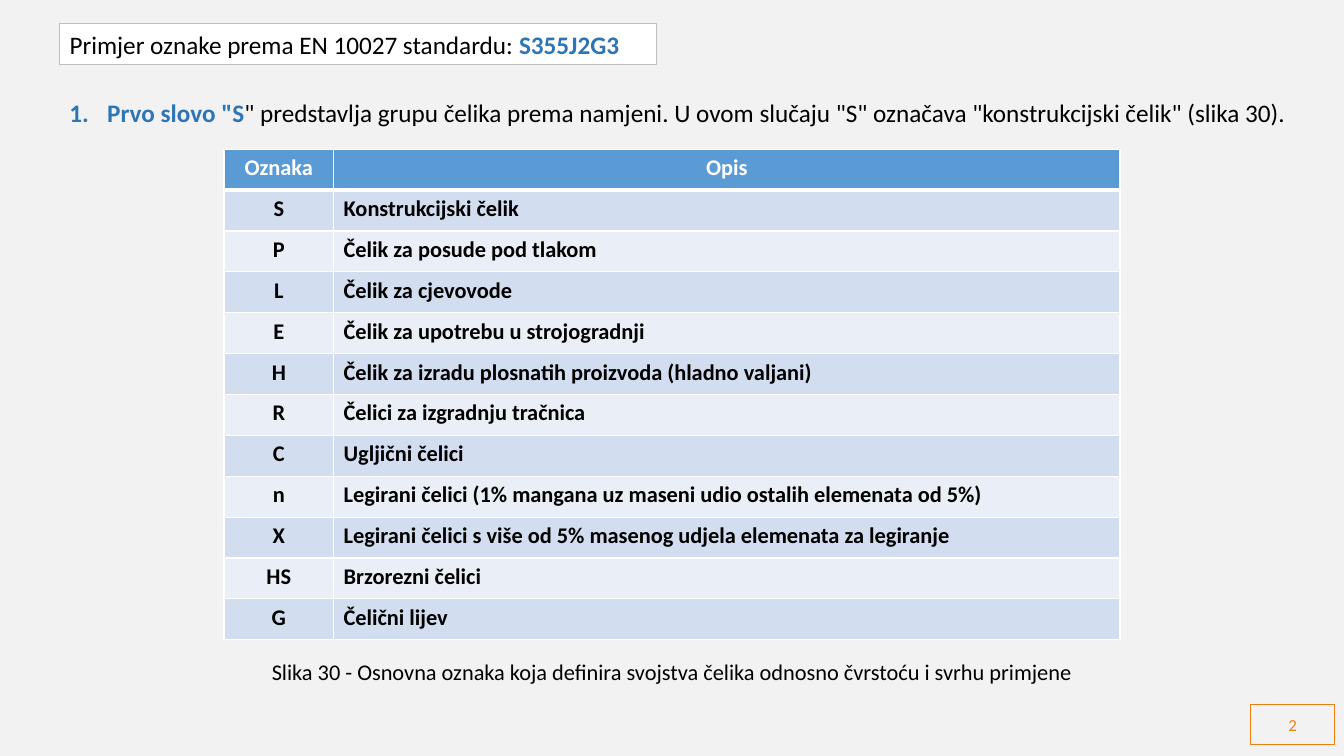
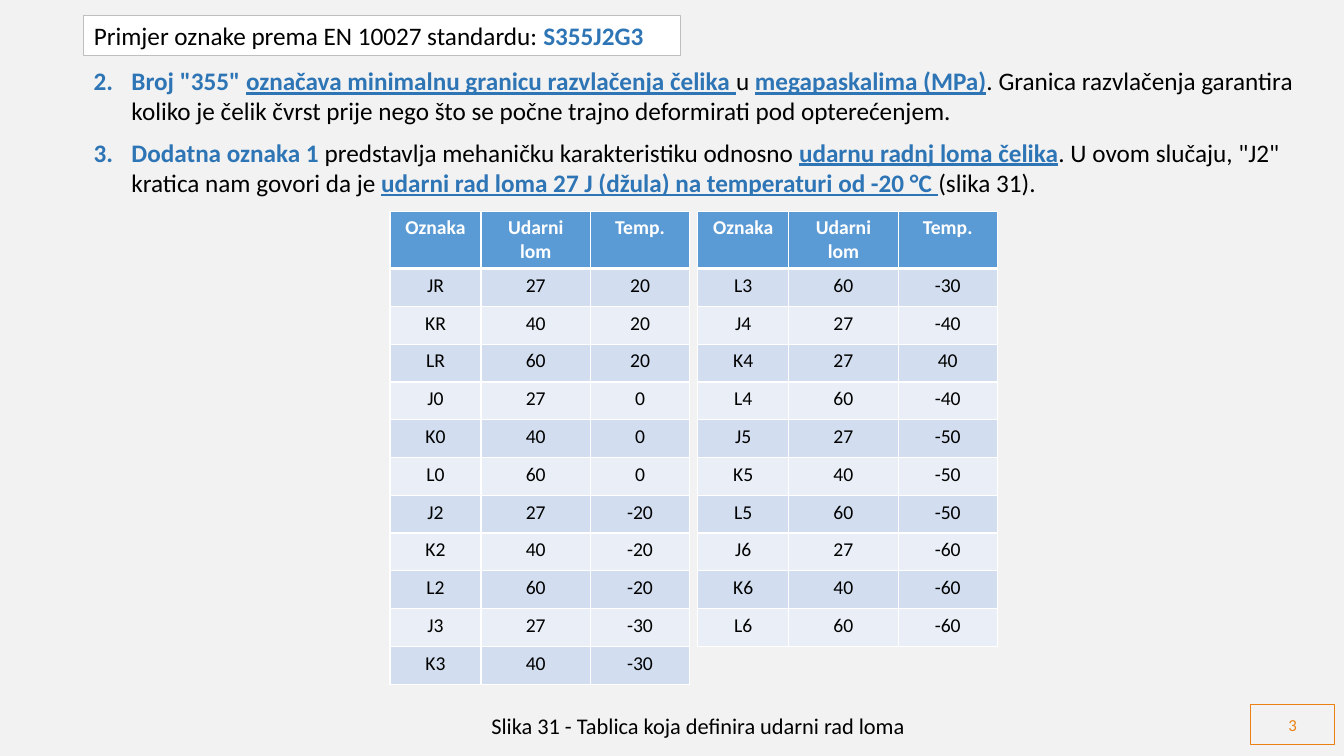
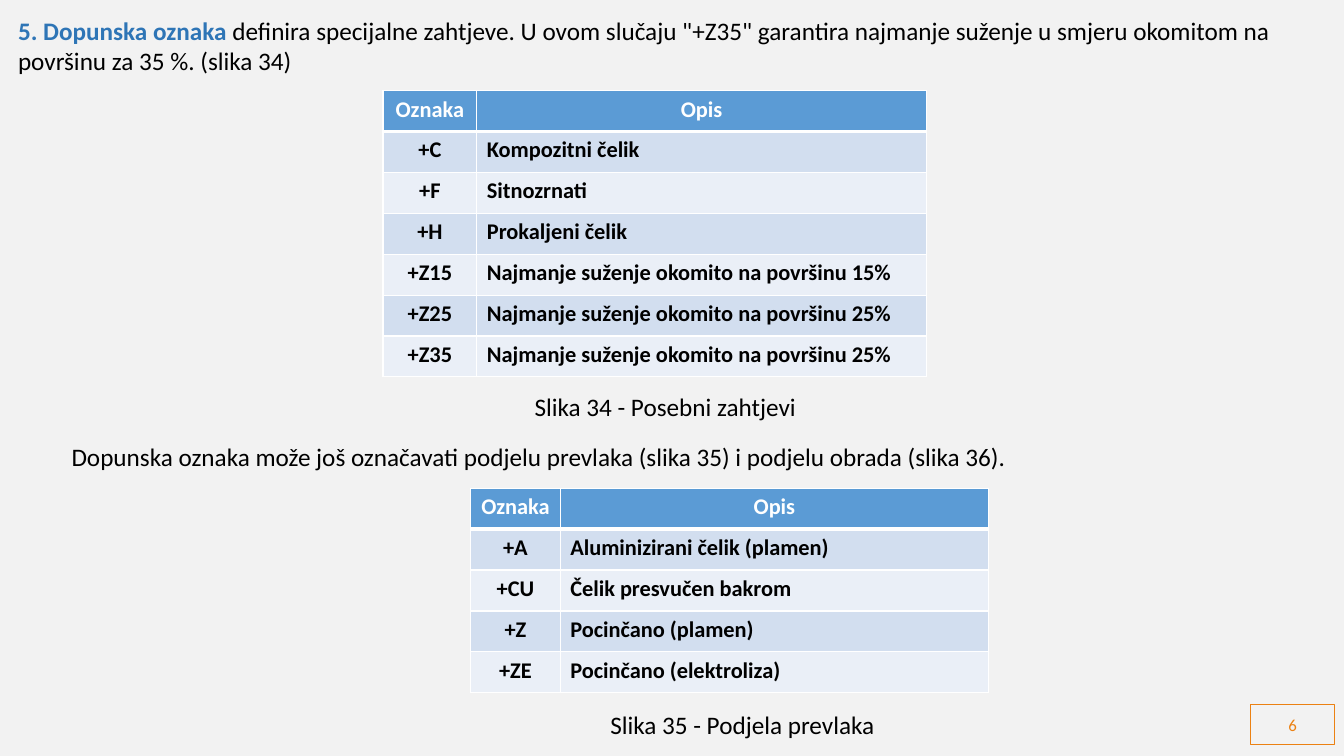
"""Builds three slides on steel designations according to EN 10027."""
import pptx
import pptx.util
import pptx.dml.color
import pptx.enum.shapes
import pptx.enum.text
import pptx.oxml
import pptx.oxml.ns
import lxml.etree

Pt = pptx.util.Pt
RGBColor = pptx.dml.color.RGBColor
ALIGN = pptx.enum.text.PP_ALIGN
ANCHOR = pptx.enum.text.MSO_ANCHOR

FONT = "Calibri"
BACKGROUND = RGBColor(0xF2, 0xF2, 0xF2)
WHITE = RGBColor(0xFF, 0xFF, 0xFF)
BLACK = RGBColor(0x00, 0x00, 0x00)
BLUE = RGBColor(0x2E, 0x75, 0xB6)
ORANGE = RGBColor(0xEB, 0x81, 0x13)
GREY = RGBColor(0xBF, 0xBF, 0xBF)
HEADER_FILL = RGBColor(0x5B, 0x9B, 0xD5)
BAND_FILLS = (RGBColor(0xD2, 0xDE, 0xEF), RGBColor(0xEA, 0xEF, 0xF7))

PLAIN, STRONG, LINED = "plain", "strong", "lined"
TITLE = [("Primjer oznake prema EN 10027 standardu: ", PLAIN), ("S355J2G3", STRONG)]
DESCRIPTION_HEAD = ("Oznaka", "Opis")
IMPACT_HEAD = ("Oznaka", "Udarni lom", "Temp.")
DESCRIPTION_STYLE = dict(size=16, bold=True, row_height=29.2, header_height=29.2,
                         alignments=(ALIGN.CENTER, ALIGN.LEFT))
IMPACT_STYLE = dict(size=14, bold=False, row_height=27, header_height=41,
                    alignments=(ALIGN.CENTER,) * 3)

PURPOSES = [
    ("S", "Konstrukcijski čelik"),
    ("P", "Čelik za posude pod tlakom"),
    ("L", "Čelik za cjevovode"),
    ("E", "Čelik za upotrebu u strojogradnji"),
    ("H", "Čelik za izradu plosnatih proizvoda (hladno valjani)"),
    ("R", "Čelici za izgradnju tračnica"),
    ("C", "Ugljični čelici"),
    ("n", "Legirani čelici (1% mangana uz maseni udio ostalih elemenata od 5%)"),
    ("X", "Legirani čelici s više od 5% masenog udjela elemenata za legiranje"),
    ("HS", "Brzorezni čelici"),
    ("G", "Čelični lijev"),
]
IMPACTS_LEFT = [
    ("JR", "27", "20"), ("KR", "40", "20"), ("LR", "60", "20"),
    ("J0", "27", "0"), ("K0", "40", "0"), ("L0", "60", "0"),
    ("J2", "27", "-20"), ("K2", "40", "-20"), ("L2", "60", "-20"),
    ("J3", "27", "-30"), ("K3", "40", "-30"),
]
IMPACTS_RIGHT = [
    ("L3", "60", "-30"), ("J4", "27", "-40"), ("K4", "27", "40"),
    ("L4", "60", "-40"), ("J5", "27", "-50"), ("K5", "40", "-50"),
    ("L5", "60", "-50"), ("J6", "27", "-60"), ("K6", "40", "-60"),
    ("L6", "60", "-60"),
]
REQUIREMENTS = [
    ("+C", "Kompozitni čelik"),
    ("+F", "Sitnozrnati"),
    ("+H", "Prokaljeni čelik"),
    ("+Z15", "Najmanje suženje okomito na površinu 15%"),
    ("+Z25", "Najmanje suženje okomito na površinu 25%"),
    ("+Z35", "Najmanje suženje okomito na površinu 25%"),
]
COATINGS = [
    ("+A", "Aluminizirani čelik (plamen)"),
    ("+CU", "Čelik presvučen bakrom"),
    ("+Z", "Pocinčano (plamen)"),
    ("+ZE", "Pocinčano (elektroliza)"),
]

SLIDES = [
    dict(
        number=2,
        title_at=(42.5, 17),
        texts=[
            dict(box=(42.5, 66.2, 911, 28.8), number=1, spans=[
                ("Prvo slovo \"S", STRONG),
                ("\" predstavlja grupu čelika prema namjeni. U ovom slučaju \"S\" označava "
                 "\"konstrukcijski čelik\" (slika 30).", PLAIN)]),
        ],
        tables=[dict(at=(160, 106.6), columns=(78.3, 561.7), head=DESCRIPTION_HEAD,
                     rows=PURPOSES, **DESCRIPTION_STYLE)],
        captions=[("Slika 30 - Osnovna oznaka koja definira svojstva čelika odnosno "
                   "čvrstoću i svrhu primjene", (160, 466.6, 640, 26.6), 16)],
    ),
    dict(
        number=3,
        title_at=(59.8, 11),
        texts=[
            dict(box=(59.8, 43.2, 900, 51), number=2, spans=[
                ("Broj \"355\" ", STRONG),
                ("označava minimalnu granicu razvlačenja čelika ", LINED),
                ("u ", PLAIN),
                ("megapaskalima (MPa)", LINED),
                (". Granica razvlačenja garantira koliko je čelik čvrst prije nego što se "
                 "počne trajno deformirati pod opterećenjem.", PLAIN)]),
            dict(box=(59.8, 94.2, 900, 51), number=3, spans=[
                ("Dodatna oznaka 1 ", STRONG),
                ("predstavlja mehaničku karakteristiku odnosno ", PLAIN),
                ("udarnu radnj loma čelika", LINED),
                (". U ovom slučaju, \"J2\" kratica nam govori da je ", PLAIN),
                ("udarni rad loma 27 J (džula) na temperaturi od -20 °C ", LINED),
                ("(slika 31).", PLAIN)]),
        ],
        tables=[dict(at=(left, 150.9), columns=(65, 78.2, 70.8), head=IMPACT_HEAD,
                     rows=rows, **IMPACT_STYLE)
                for left, rows in ((278.6, IMPACTS_LEFT), (498.4, IMPACTS_RIGHT))],
        captions=[("Slika 31 - Tablica koja definira udarni rad loma",
                   (342, 505.4, 313.2, 26.6), 16)],
    ),
    dict(
        number=6,
        title_at=None,
        texts=[
            dict(box=(5.8, 7.2, 938.2, 51), spans=[
                ("5. Dopunska oznaka ", STRONG),
                ("definira specijalne zahtjeve. U ovom slučaju \"+Z35\" garantira najmanje "
                 "suženje u smjeru okomitom na površinu za 35 %. (slika 34)", PLAIN)]),
            dict(box=(44, 311.8, 893.5, 28.8), spans=[
                ("Dopunska oznaka može još označavati podjelu prevlaka (slika 35) i "
                 "podjelu obrada (slika 36).", PLAIN)]),
        ],
        tables=[
            dict(at=(273.6, 64.8), columns=(67, 321), head=DESCRIPTION_HEAD,
                 rows=REQUIREMENTS, **DESCRIPTION_STYLE),
            dict(at=(336.2, 348.8), columns=(64, 306), head=DESCRIPTION_HEAD,
                 rows=COATINGS, **DESCRIPTION_STYLE),
        ],
        captions=[("Slika 34 - Posebni zahtjevi", (373.7, 275.8, 203, 28.8), 18),
                  ("Slika 35 - Podjela prevlaka", (427.7, 503.3, 205.2, 28.8), 18)],
    ),
]


def points(values):
    return [Pt(value) for value in values]


def write(frame, spans, size=18, color=BLACK, bold=False, align=ALIGN.LEFT,
          anchor=ANCHOR.TOP, wrap=True, number=None):
    """Fill a text frame with styled spans, numbered on request."""
    frame.word_wrap = wrap
    frame.vertical_anchor = anchor
    paragraph = frame.paragraphs[0]
    paragraph.alignment = align
    for text, style in spans:
        run = paragraph.add_run()
        run.text = text
        run.font.name = FONT
        run.font.size = Pt(size)
        run.font.bold = bold or style != PLAIN
        run.font.underline = style == LINED
        run.font.color.rgb = color if style == PLAIN else BLUE
    if number:
        properties = paragraph._p.get_or_add_pPr()
        properties.set("marL", str(Pt(27)))
        properties.set("indent", str(-Pt(27)))
        bullet = lxml.etree.SubElement(properties, pptx.oxml.ns.qn("a:buAutoNum"))
        bullet.set("type", "arabicPeriod")
        bullet.set("startAt", str(number))


def outline(shape, color):
    shape.line.color.rgb = color
    shape.line.width = Pt(0.75)


def add_title(slide, left, top):
    title = slide.shapes.title
    title.left, title.top, title.width, title.height = points((left, top, 426.2, 28.8))
    title.fill.solid()
    title.fill.fore_color.rgb = WHITE
    outline(title, GREY)
    title.text_frame.auto_size = pptx.enum.text.MSO_AUTO_SIZE.NONE
    write(title.text_frame, TITLE)


def add_page_number(slide, number):
    shape = slide.shapes.add_shape(pptx.enum.shapes.MSO_SHAPE.RECTANGLE,
                                   *points((893.5, 503.3, 59.8, 28.8)))
    shape.shadow.inherit = False
    shape.fill.background()
    outline(shape, ORANGE)
    write(shape.text_frame, [(str(number), PLAIN)], size=12, color=ORANGE,
          align=ALIGN.CENTER, anchor=ANCHOR.MIDDLE)


def add_text(slide, box, spans, **text_format):
    write(slide.shapes.add_textbox(*points(box)).text_frame, spans, **text_format)


def set_borders(cell, top, bottom):
    properties = cell._tc.get_or_add_tcPr()
    for side, width in (("L", 1), ("R", 1), ("T", top), ("B", bottom)):
        properties.append(pptx.oxml.parse_xml(
            f'<a:ln{side} {pptx.oxml.ns.nsdecls("a")} w="{Pt(width)}">'
            f'<a:solidFill><a:srgbClr val="{WHITE}"/></a:solidFill></a:ln{side}>'))


def add_table(slide, at, columns, head, rows, size, bold, row_height, header_height,
              alignments):
    height = header_height + row_height * len(rows)
    table = slide.shapes.add_table(len(rows) + 1, len(columns),
                                   *points((*at, sum(columns), height))).table
    for column, width in zip(table.columns, columns):
        column.width = Pt(width)
    for row_index, texts in enumerate([head, *rows]):
        header = row_index == 0
        table.rows[row_index].height = Pt(header_height if header else row_height)
        for column_index, text in enumerate(texts):
            cell = table.cell(row_index, column_index)
            set_borders(cell, top=3 if row_index == 1 else 1, bottom=3 if header else 1)
            cell.fill.solid()
            cell.fill.fore_color.rgb = HEADER_FILL if header else BAND_FILLS[(row_index - 1) % 2]
            write(cell.text_frame, [(text, PLAIN)], size=size, bold=header or bold,
                  color=WHITE if header else BLACK,
                  align=ALIGN.CENTER if header else alignments[column_index])


def main():
    presentation = pptx.Presentation()
    presentation.slide_width, presentation.slide_height = points((960, 540))
    background = presentation.slide_master.background.fill
    background.solid()
    background.fore_color.rgb = BACKGROUND
    title_only, blank = presentation.slide_layouts[5], presentation.slide_layouts[6]
    for content in SLIDES:
        slide = presentation.slides.add_slide(title_only if content["title_at"] else blank)
        if content["title_at"]:
            add_title(slide, *content["title_at"])
        add_page_number(slide, content["number"])
        for text in content["texts"]:
            add_text(slide, **text)
        for table in content["tables"]:
            add_table(slide, **table)
        for caption, box, size in content["captions"]:
            add_text(slide, box, [(caption, PLAIN)], size=size, align=ALIGN.CENTER, wrap=False)
    presentation.save("out.pptx")


if __name__ == "__main__":
    main()
